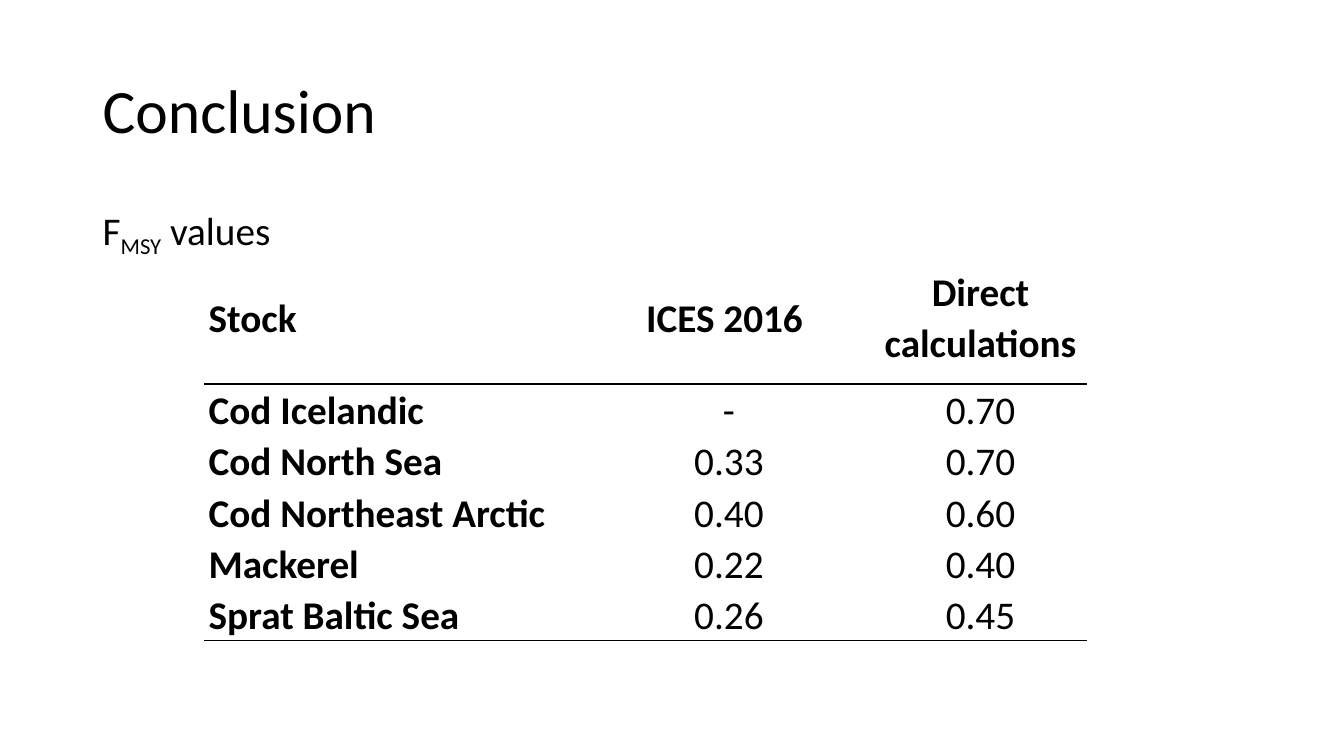
from dataclasses import dataclass

from lxml import etree
from pptx import Presentation, util as u
from pptx.dml.color import RGBColor
from pptx.enum import text
from pptx.oxml import ns


@dataclass(frozen=True)
class Theme:
    font: str = "Calibri"
    ink: str = "000000"
    paper: str = "FFFFFF"
    title_size: int = 44
    body_size: int = 28
    border_width: int = 1


class SlideBuilder:
    def __init__(self, slide, theme):
        self.slide = slide
        self.theme = theme

    def add_run(self, paragraph, wording, size, bold=False, baseline=None):
        """Append a styled run; baseline is a percentage, negative for subscript."""
        run = paragraph.add_run()
        run.text = wording
        run.font.name = self.theme.font
        run.font.size = u.Pt(size)
        run.font.bold = bold
        run.font.color.rgb = RGBColor.from_string(self.theme.ink)
        if baseline is not None:
            run._r.get_or_add_rPr().set("baseline", str(baseline * 1000))

    def add_text(self, box, runs, size, anchor=text.MSO_ANCHOR.TOP, space_before=0):
        """Place one paragraph made of (wording, baseline) runs."""
        frame = self.slide.shapes.add_textbox(*map(u.Inches, box)).text_frame
        frame.word_wrap = True
        frame.vertical_anchor = anchor
        paragraph = frame.paragraphs[0]
        paragraph.line_spacing = 0.9
        paragraph.space_before = u.Pt(space_before)
        for wording, baseline in runs:
            self.add_run(paragraph, wording, size, baseline=baseline)

    def set_borders(self, cell, ruled_sides):
        """Draw all four borders, dark on the ruled sides."""
        properties = cell._tc.get_or_add_tcPr()
        for side in "LRTB":
            line = etree.SubElement(properties, ns.qn(f"a:ln{side}"),
                                    w=str(u.Pt(self.theme.border_width)))
            fill = etree.SubElement(line, ns.qn("a:solidFill"))
            color = self.theme.ink if side in ruled_sides else self.theme.paper
            etree.SubElement(fill, ns.qn("a:srgbClr"), val=color)

    def fill_cell(self, cell, wording, is_header, is_label, ruled_sides):
        self.set_borders(cell, ruled_sides)
        cell.fill.background()
        cell.margin_left = cell.margin_right = u.Inches(0.04)
        cell.margin_top = cell.margin_bottom = 0
        cell.vertical_anchor = text.MSO_ANCHOR.MIDDLE if is_header else text.MSO_ANCHOR.TOP
        paragraph = cell.text_frame.paragraphs[0]
        paragraph.line_spacing = 1.07
        paragraph.alignment = text.PP_ALIGN.LEFT if is_label else text.PP_ALIGN.CENTER
        self.add_run(paragraph, wording, self.theme.body_size, bold=is_header or is_label)

    def add_table(self, box, rows, column_widths, header_height, row_height):
        table = self.slide.shapes.add_table(
            len(rows), len(column_widths), *map(u.Inches, box)).table
        table.first_row = table.horz_banding = False
        for column, width in zip(table.columns, column_widths):
            column.width = u.Inches(width)
        ruled = {0: "B", 1: "T", len(rows) - 1: "B"}
        for row_index, row in enumerate(rows):
            is_header = row_index == 0
            table.rows[row_index].height = u.Inches(header_height if is_header else row_height)
            for column_index, wording in enumerate(row):
                self.fill_cell(table.cell(row_index, column_index), wording,
                               is_header, column_index == 0, ruled.get(row_index, ""))


STOCK_ROWS = [
    ("Stock", "ICES 2016 ", "Direct calculations"),
    ("Cod Icelandic", "-", "0.70"),
    ("Cod North Sea", "0.33", "0.70"),
    ("Cod Northeast Arctic", "0.40", "0.60"),
    ("Mackerel", "0.22", "0.40"),
    ("Sprat Baltic Sea", "0.26", "0.45"),
]


def main():
    presentation = Presentation()
    presentation.slide_width = u.Inches(13.33)
    presentation.slide_height = u.Inches(7.5)
    theme = Theme()
    builder = SlideBuilder(presentation.slides.add_slide(presentation.slide_layouts[6]), theme)

    builder.add_table((2.03, 2.48, 8.75, 3.58), STOCK_ROWS, (3.76, 2.88, 2.11),
                      header_height=1.33, row_height=0.45)
    builder.add_text((0.92, 0.4, 11.5, 1.45), [("Conclusion", None)],
                     theme.title_size, anchor=text.MSO_ANCHOR.MIDDLE)
    builder.add_text((0.92, 2, 11.5, 4.76),
                     [("F", None), ("MSY", -25), (" values", None)],
                     theme.body_size, space_before=10)
    presentation.save("out.pptx")


if __name__ == "__main__":
    main()
